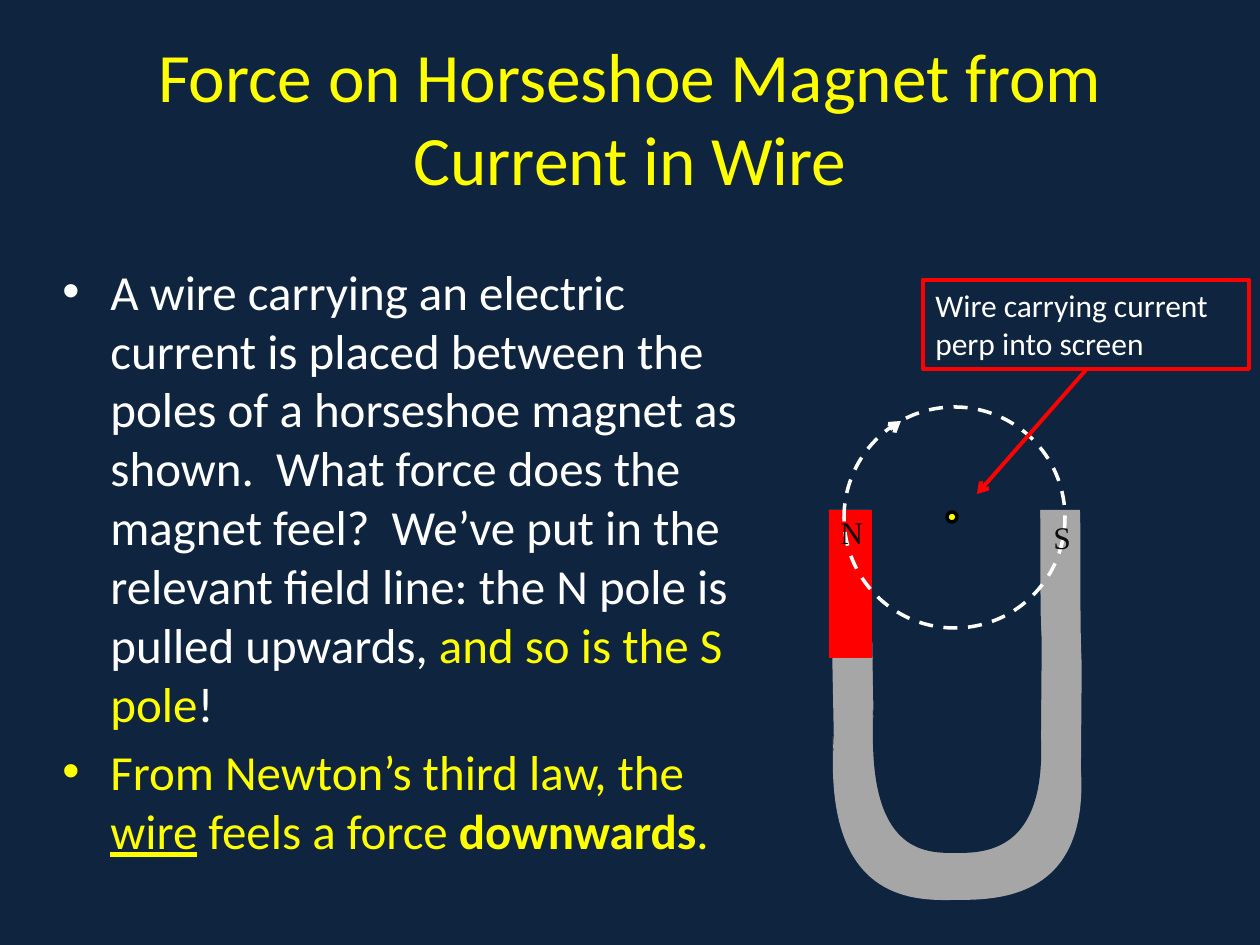
from dataclasses import dataclass

from lxml.etree import SubElement
from pptx import Presentation
from pptx.dml.color import RGBColor
from pptx.enum.dml import MSO_LINE
from pptx.enum.shapes import MSO_CONNECTOR, MSO_SHAPE
from pptx.enum.text import MSO_ANCHOR, PP_ALIGN
from pptx.oxml.ns import qn
from pptx.util import Emu, Pt

PX = 914400 // 126


@dataclass(frozen=True)
class Theme:
    navy: str = "0F243E"
    yellow: str = "FFFF00"
    white: str = "FFFFFF"
    red: str = "FF0000"
    gray: str = "A6A6A6"
    ink: str = "0D0D0D"
    black: str = "000000"
    sans: str = "Calibri"
    serif: str = "Times New Roman"
    title: float = 39.6
    body: int = 28
    label: int = 18


T = Theme()

TITLE = "Force on Horseshoe Magnet from Current in Wire"
# Each bullet is a list of (text, colour, style)
BULLETS = [
    [("A wire carrying an electric current is placed between the poles of a "
      "horseshoe magnet as shown.  What force does the magnet feel?  We’ve put "
      "in the relevant field line: the N pole is pulled upwards, ", T.white, ""),
     ("and so is the S pole", T.yellow, ""),
     ("!", T.white, "")],
    [("From Newton’s third law, the ", T.yellow, ""),
     ("wire", T.yellow, "underline"),
     (" feels a force ", T.yellow, ""),
     ("downwards", T.yellow, "bold"),
     (".", T.yellow, "")],
]
WIRE_LABEL = "Wire carrying current perp into screen"
POLES = [("S", 1041, 512), ("N", 828, 507)]

# Start point, then Bezier segments: two control points and an end point
MAGNET_OUTER = (829, 510), [
    ((830, 538), (830, 597), (832, 641)),
    ((837, 897), (832, 651), (833, 771)),
    ((836, 900), (914, 901), (955, 900)),
    ((995, 900), (1089, 901), (1081, 770)),
    ((1082, 627), (1082, 684), (1081, 641)),
    ((1080, 605), (1081, 533), (1080, 510)),
]
MAGNET_INNER = (871, 508), [
    ((872, 533), (872, 586), (872, 624)),
    ((876, 851), (872, 634), (873, 740)),
    ((874, 853), (927, 853), (955, 853)),
    ((984, 853), (1046, 853), (1041, 738)),
    ((1042, 612), (1042, 652), (1041, 624)),
    ((1040, 592), (1041, 528), (1040, 508)),
]


def px(*values):
    return [Emu(v * PX) for v in values]


def rgb(color):
    return RGBColor.from_string(color)


def paint(sp, fill=None, line=None, width=2.0):
    sp.shadow.inherit = False
    if fill:
        sp.fill.solid()
        sp.fill.fore_color.rgb = rgb(fill)
    else:
        sp.fill.background()
    if line:
        sp.line.color.rgb = rgb(line)
        sp.line.width = Pt(width)
    else:
        sp.line.fill.background()


def style(r, size, color, font=T.sans):
    r.font.name, r.font.size, r.font.color.rgb = font, Pt(size), rgb(color)


def add_shape(shapes, kind, box, **look):
    sp = shapes.add_shape(kind, *px(*box))
    paint(sp, **look)
    return sp


def add_curve(shapes, outline, fill):
    """Lay out a freeform, then turn each three line steps into one Bezier."""
    start, segments = outline
    builder = shapes.build_freeform(*start, scale=PX)
    builder.add_line_segments([pt for seg in segments for pt in seg], close=False)
    sp = builder.convert_to_shape()
    steps = list(sp._element.iter(qn("a:lnTo")))
    outline_xml = steps[0].getparent()
    for i in range(0, len(steps), 3):
        curve = SubElement(outline_xml, qn("a:cubicBezTo"))
        for step in steps[i:i + 3]:
            curve.append(step[0])
            outline_xml.remove(step)
    paint(sp, fill=fill)


def add_arrow(shapes, ends, color):
    line = shapes.add_connector(MSO_CONNECTOR.STRAIGHT, *px(*ends))
    line.line.color.rgb = rgb(color)
    line.line.width = Pt(2.25)
    SubElement(line.line._get_or_add_ln(), qn("a:tailEnd"), type="arrow")
    SubElement(line._element.spPr, qn("a:effectLst"))


def add_title(s):
    sp = s.shapes.title
    sp.left, sp.top, sp.width, sp.height = px(63, 38, 1134, 157)
    tf = sp.text_frame
    tf.text = TITLE
    tf.vertical_anchor = MSO_ANCHOR.MIDDLE
    tf.paragraphs[0].alignment = PP_ALIGN.CENTER
    style(tf.paragraphs[0].runs[0], T.title, T.yellow)


def add_bullets(s):
    tf = s.shapes.add_textbox(*px(50, 255, 714, 651)).text_frame
    tf.word_wrap = True
    for i, parts in enumerate(BULLETS):
        p = tf.add_paragraph() if i else tf.paragraphs[0]
        p.space_before = Pt(5.6)
        pPr = p._p.get_or_add_pPr()
        pPr.set("marL", str(48 * PX))
        pPr.set("indent", str(-48 * PX))
        SubElement(pPr, qn("a:buFont"), typeface="Arial")
        SubElement(pPr, qn("a:buChar"), char="•")
        for text, color, emphasis in parts:
            r = p.add_run()
            r.text = text
            style(r, T.body, color)
            if emphasis:
                setattr(r.font, emphasis, True)


def add_magnet(s):
    shapes = s.shapes.add_group_shape().shapes
    add_curve(shapes, MAGNET_OUTER, T.gray)
    add_curve(shapes, MAGNET_INNER, T.navy)
    add_shape(shapes, MSO_SHAPE.RECTANGLE, (829, 510, 43, 148), fill=T.red)
    field = add_shape(shapes, MSO_SHAPE.OVAL, (844, 407, 221, 221), line=T.white)
    field.line.dash_style = MSO_LINE.DASH
    for pole, x, y in POLES:
        tf = shapes.add_textbox(*px(x, y, 84, 53)).text_frame
        tf.word_wrap = True
        tf.text = pole
        style(tf.paragraphs[0].runs[0], T.label, T.ink, T.serif)
    add_arrow(shapes, (893, 427, 901, 421), T.white)
    add_shape(shapes, MSO_SHAPE.OVAL, (947, 512, 10, 10), fill=T.yellow, line=T.black)


def add_wire_label(s):
    sp = add_shape(s.shapes, MSO_SHAPE.RECTANGLE, (923, 280, 326, 89),
                   line=T.red, width=2.25)
    tf = sp.text_frame
    tf.text = WIRE_LABEL
    tf.word_wrap = True
    tf.vertical_anchor = MSO_ANCHOR.TOP
    tf.paragraphs[0].alignment = PP_ALIGN.LEFT
    style(tf.paragraphs[0].runs[0], T.label, T.white)
    add_arrow(s.shapes, (1086, 370, 977, 494), T.red)


def main():
    prs = Presentation()
    prs.slide_width, prs.slide_height = px(1260, 945)
    s = prs.slides.add_slide(prs.slide_layouts[5])
    s.background.fill.solid()
    s.background.fill.fore_color.rgb = rgb(T.navy)
    add_title(s)
    add_bullets(s)
    add_magnet(s)
    add_wire_label(s)
    prs.save("out.pptx")


if __name__ == "__main__":
    main()
